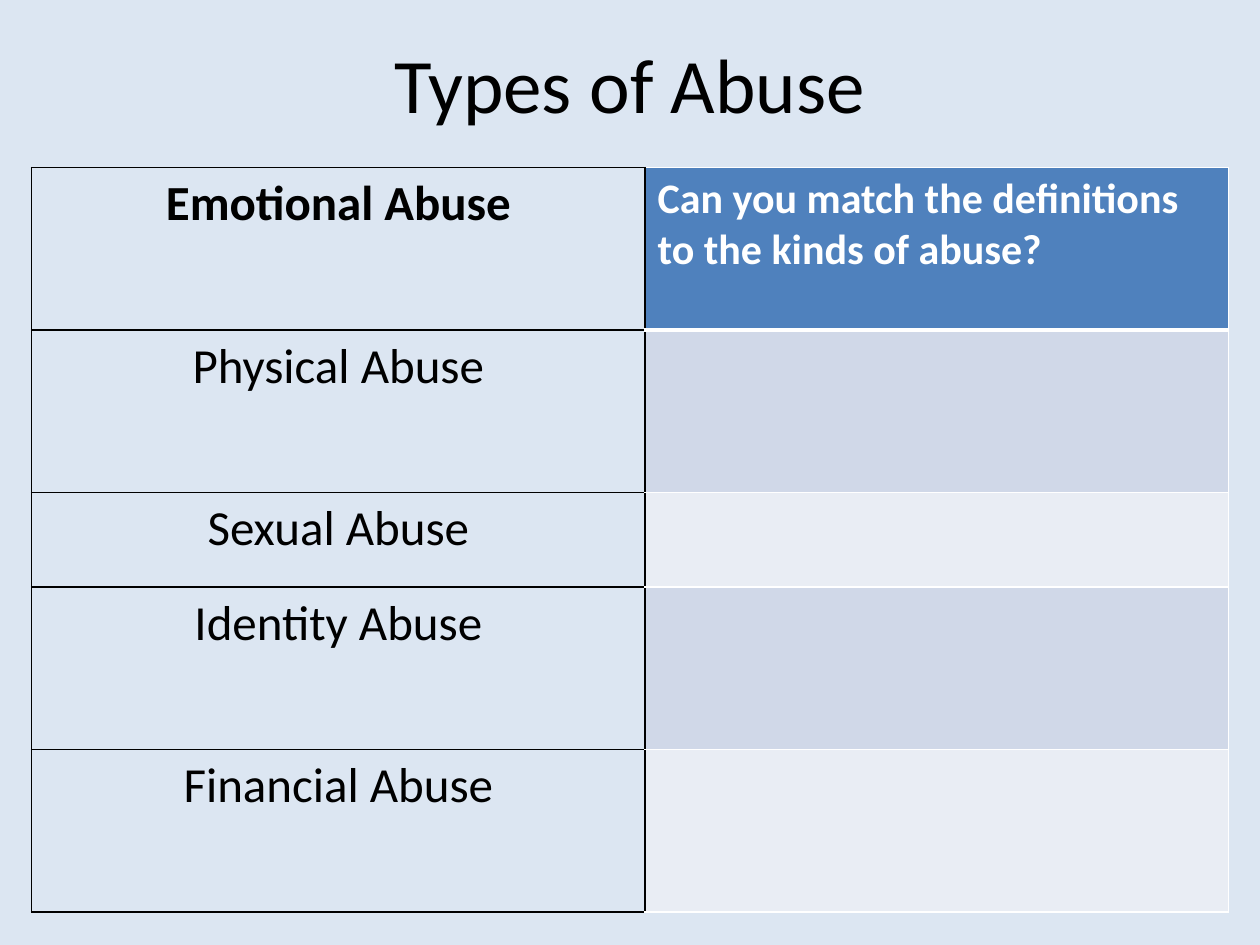
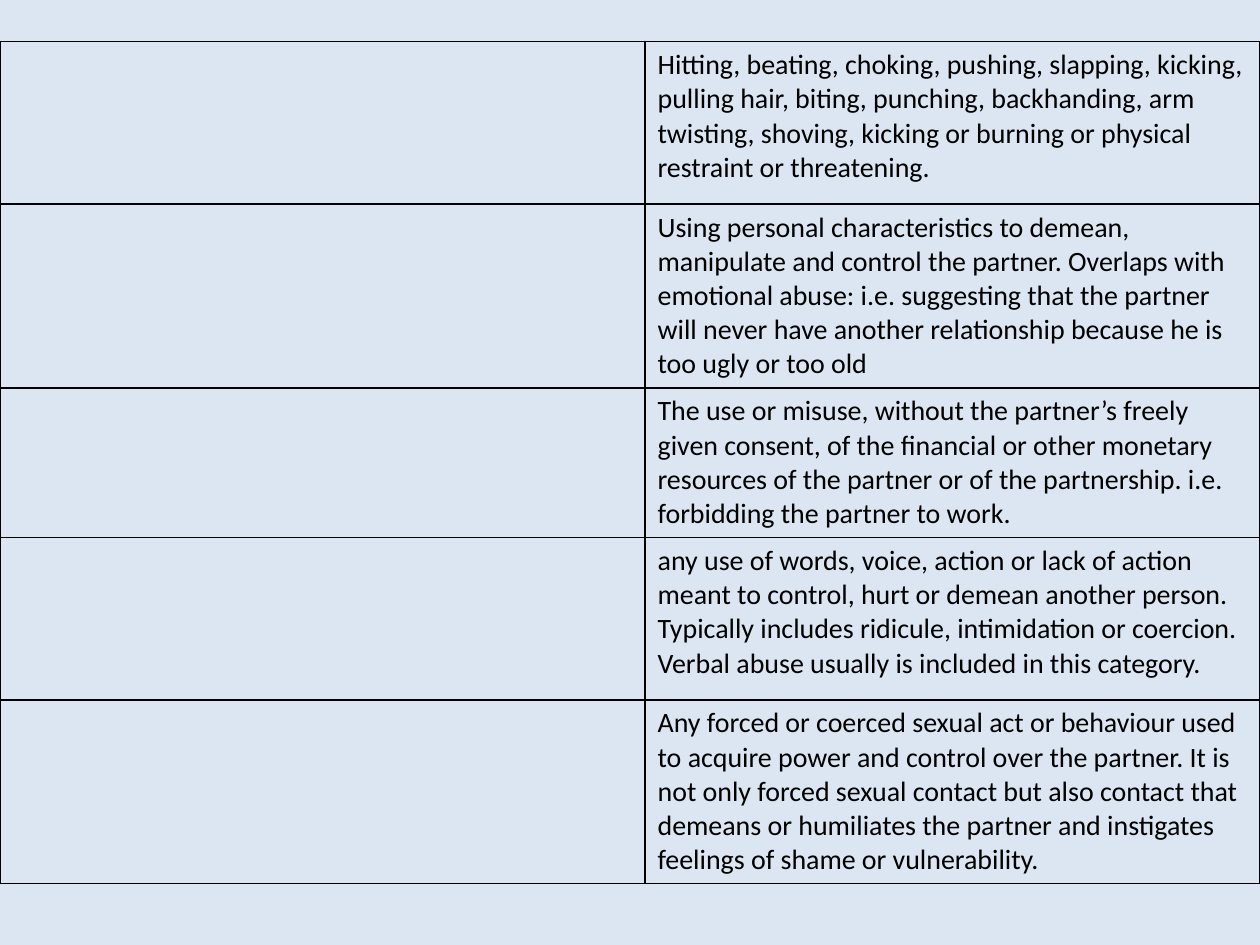
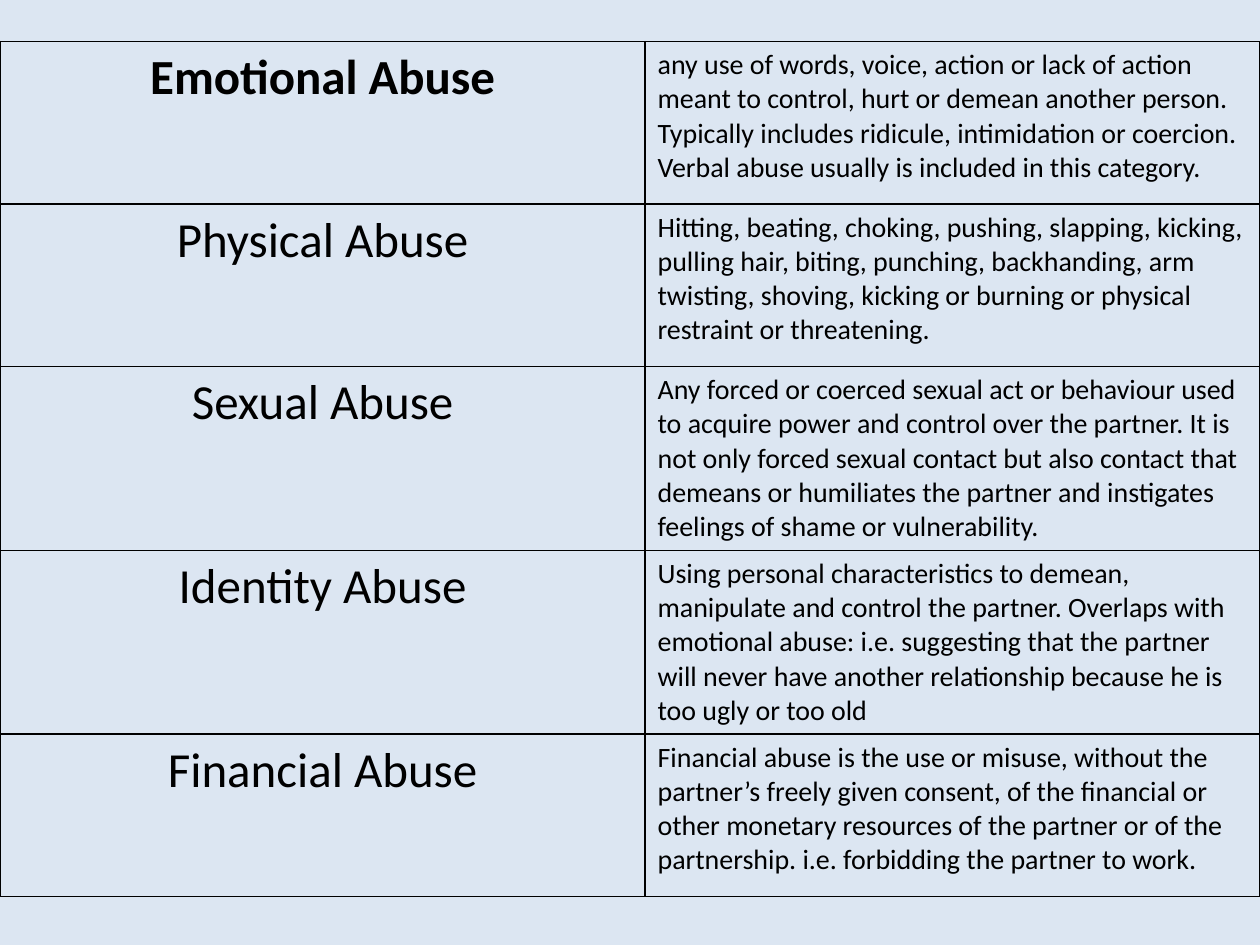
from lxml import etree
from pptx import Presentation
from pptx.dml.color import RGBColor
from pptx.enum.text import MSO_ANCHOR, PP_ALIGN
from pptx.oxml.ns import qn
from pptx.util import Inches, Pt

COLORS = {
    "background": "DCE6F2",
    "ink": "000000",
    "white": "FFFFFF",
    "header": "4F81BD",
    "band_dark": "D0D8E8",
    "band_light": "E9EDF4",
}
FONT = "Calibri"
ROW_HEIGHTS = [1.29, 1.29, 0.75, 1.29, 1.29]
FULL_COLUMNS = [5.12, 4.88]
FULL_TOP = 0.33

KINDS = ["Emotional", "Physical", "Sexual", "Identity", "Financial"]
LABELS = [f"{kind} Abuse" for kind in KINDS]
FINANCIAL = (
    "use or misuse, without the partner’s freely given consent, of the financial or other "
    "monetary resources of the partner or of the partnership. i.e. forbidding the partner to work."
)
DEFINITIONS = {
    "Emotional": "any use of words, voice, action or lack of action meant to control, hurt or "
    "demean another person. Typically includes ridicule, intimidation or coercion. "
    "Verbal abuse usually is included in this category.",
    "Physical": "Hitting, beating, choking, pushing, slapping, kicking, pulling hair, biting, "
    "punching, backhanding, arm twisting, shoving, kicking or burning or physical "
    "restraint or threatening.",
    "Sexual": "Any forced or coerced sexual act or behaviour used to acquire power and control "
    "over the partner. It is not only forced sexual contact but also contact that demeans "
    "or humiliates the partner and instigates feelings of shame or vulnerability.",
    "Identity": "Using personal characteristics to demean, manipulate and control the partner. "
    "Overlaps with emotional abuse: i.e. suggesting that the partner will never have "
    "another relationship because he is too ugly or too old",
    "Financial": f"Financial abuse is the {FINANCIAL}",
}


def style_cell(cell, text="", size=16, bold=False, align=PP_ALIGN.LEFT, color="ink",
               fill=None, edges=("ink",) * 4, bottom_width=1):
    properties = cell._tc.get_or_add_tcPr()
    for side, edge in zip("LRTB", edges):
        width = Pt(bottom_width if side == "B" else 1)
        line = etree.SubElement(properties, qn(f"a:ln{side}"), w=str(width))
        solid = etree.SubElement(line, qn("a:solidFill"))
        etree.SubElement(solid, qn("a:srgbClr"), val=COLORS[edge])
    if fill:
        cell.fill.solid()
        cell.fill.fore_color.rgb = RGBColor.from_string(COLORS[fill])
    else:
        cell.fill.background()
    if text:
        cell.text = text
        paragraph = cell.text_frame.paragraphs[0]
        paragraph.alignment = align
        paragraph.font.name = FONT
        paragraph.font.size = Pt(size)
        paragraph.font.bold = bold
        paragraph.font.color.rgb = RGBColor.from_string(COLORS[color])


def add_abuse_table(slide, left, top, column_widths, labels):
    frame = slide.shapes.add_table(
        len(ROW_HEIGHTS), len(column_widths), Inches(left), Inches(top),
        Inches(sum(column_widths)), Inches(sum(ROW_HEIGHTS)))
    table = frame.table
    table.first_row = False
    table.horz_banding = False
    for column, width in zip(table.columns, column_widths):
        column.width = Inches(width)
    for row, height in zip(table.rows, ROW_HEIGHTS):
        row.height = Inches(height)
    for index, label in enumerate(labels):
        style_cell(table.cell(index, 0), label, 28, index == 0, PP_ALIGN.CENTER)
    return table


presentation = Presentation()
presentation.slide_width = Inches(10)
presentation.slide_height = Inches(7.5)
background = presentation.slide_master.background.fill
background.solid()
background.fore_color.rgb = RGBColor.from_string(COLORS["background"])
title_layout = presentation.slide_layouts[5]
blank_layout = presentation.slide_layouts[6]

slide = presentation.slides.add_slide(title_layout)
title = slide.shapes.title
title.left, title.top, title.width, title.height = map(Inches, (0.5, 0.03, 9, 1.25))
title.text = "Types of Abuse"
title.text_frame.vertical_anchor = MSO_ANCHOR.MIDDLE
paragraph = title.text_frame.paragraphs[0]
paragraph.alignment = PP_ALIGN.CENTER
paragraph.font.name = FONT
paragraph.font.size = Pt(44)
paragraph.font.color.rgb = RGBColor.from_string(COLORS["ink"])

table = add_abuse_table(slide, 0.25, 1.33, [4.87, 4.63], LABELS)
white_edges = ("ink", "white", "white", "white")
style_cell(table.cell(0, 1), "Can you match the definitions to the kinds of abuse?", 24, True,
           color="white", fill="header", edges=white_edges, bottom_width=3)
for index in range(1, len(LABELS)):
    band = "band_dark" if index % 2 else "band_light"
    style_cell(table.cell(index, 1), fill=band, edges=white_edges)

shuffled = ["Physical", "Identity", "Financial", "Emotional", "Sexual"]
quiz_definitions = DEFINITIONS | {"Financial": f"The {FINANCIAL}"}
for labels, order, definitions in [
    ([""] * len(KINDS), shuffled, quiz_definitions),
    (LABELS, KINDS, DEFINITIONS),
]:
    slide = presentation.slides.add_slide(blank_layout)
    table = add_abuse_table(slide, 0, FULL_TOP, FULL_COLUMNS, labels)
    for index, kind in enumerate(order):
        style_cell(table.cell(index, 1), definitions[kind])

presentation.save("out.pptx")
